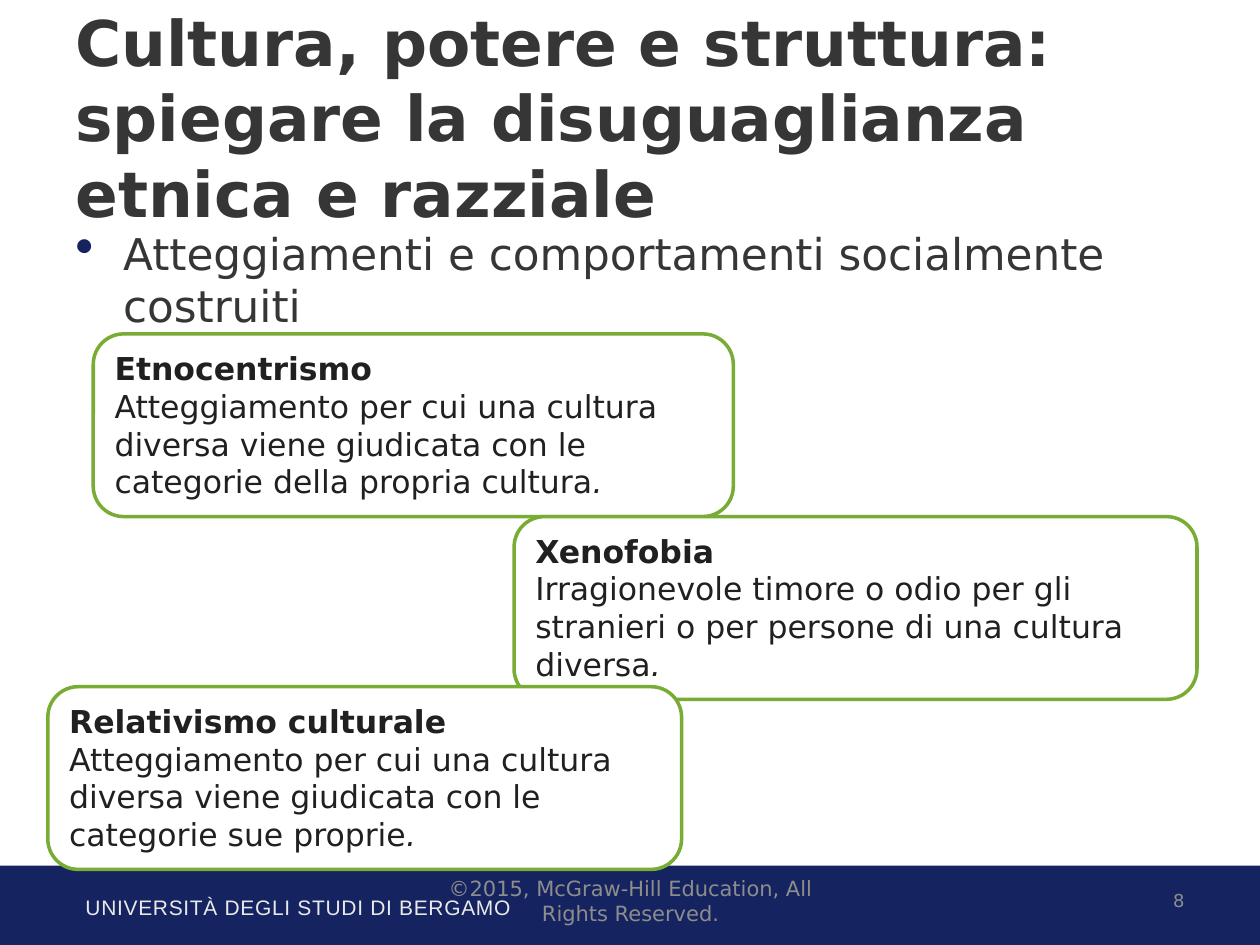
from pptx import Presentation
from pptx.dml.color import RGBColor
from pptx.enum.shapes import MSO_SHAPE
from pptx.enum.text import MSO_ANCHOR, PP_ALIGN
from pptx.util import Inches, Pt
from lxml.etree import SubElement
from pptx.oxml.ns import qn

TITLE = "Cultura, potere e struttura: spiegare la disuguaglianza etnica e razziale"
BULLET = "Atteggiamenti e comportamenti socialmente costruiti"
UNIVERSITY = "UNIVERSITÀ DEGLI STUDI DI BERGAMO"
COPYRIGHT = "©2015, McGraw-Hill Education, All Rights Reserved."
PAGE = "8"
CARDS = [
    (0.74, 2.65, 5.08, "Etnocentrismo",
     "Atteggiamento per cui una cultura diversa viene giudicata con le categorie della propria cultura"),
    (4.08, 4.1, 5.42, "Xenofobia",
     "Irragionevole timore o odio per gli stranieri o per persone di una cultura diversa"),
    (0.38, 5.45, 5.03, "Relativismo culturale",
     "Atteggiamento per cui una cultura diversa viene giudicata con le categorie sue proprie"),
]
CARD_HEIGHT = 1.45
THEME = {
    "font": "DejaVu Sans", "footer_font": "Arial",
    "navy": "152460", "green": "78AC35", "white": "FFFFFF",
    "heading": "363636", "card": "202020", "muted": "8D8D8D", "footer": "E9E9E9",
    "title_size": 36, "bullet_size": 25, "card_size": 18, "footer_size": 12, "page_size": 10.2,
}


def color(name):
    return RGBColor.from_string(THEME[name])


def add_run(p, text, size, ink, font="font", bold=False, italic=False):
    r = p.add_run()
    r.text = text
    r.font.name = THEME[font]
    r.font.size = Pt(THEME[size])
    r.font.color.rgb = color(ink)
    r.font.bold = bold
    r.font.italic = italic
    return r


def add_box(s, box, anchor=MSO_ANCHOR.TOP, align=PP_ALIGN.LEFT):
    tf = s.shapes.add_textbox(*map(Inches, box)).text_frame
    tf.word_wrap = True
    tf.vertical_anchor = anchor
    p = tf.paragraphs[0]
    p.alignment = align
    return p


def add_shape(s, kind, box, fill, line=None):
    sp = s.shapes.add_shape(kind, *map(Inches, box))
    sp.shadow.inherit = False
    sp.fill.solid()
    sp.fill.fore_color.rgb = color(fill)
    if line:
        sp.line.color.rgb = color(line)
        sp.line.width = Pt(2)
    else:
        sp.line.fill.background()
    return sp


def add_bullet(p):
    pPr = p._p.get_or_add_pPr()
    pPr.set("marL", str(Inches(0.38)))
    pPr.set("indent", str(-Inches(0.38)))
    SubElement(SubElement(pPr, qn("a:buClr")), qn("a:srgbClr")).set("val", THEME["navy"])
    SubElement(pPr, qn("a:buSzPct")).set("val", "122000")
    SubElement(pPr, qn("a:buChar")).set("char", "•")


def add_card(s, left, top, width, term, definition):
    sp = add_shape(s, MSO_SHAPE.ROUNDED_RECTANGLE, (left, top, width, CARD_HEIGHT), "white", "green")
    tf = sp.text_frame
    tf.word_wrap = True
    tf.vertical_anchor = MSO_ANCHOR.TOP
    head, body = tf.paragraphs[0], tf.add_paragraph()
    head.alignment = body.alignment = PP_ALIGN.LEFT
    add_run(head, term, "card_size", "card", bold=True)
    add_run(body, definition, "card_size", "card")
    add_run(body, ".", "card_size", "card", italic=True)


def main():
    prs = Presentation()
    prs.slide_width, prs.slide_height = Inches(10), Inches(7.5)
    s = prs.slides.add_slide(prs.slide_layouts[6])

    add_shape(s, MSO_SHAPE.RECTANGLE, (0, 6.87, 10, 0.68), "navy")
    p = add_box(s, (0.58, 7.05, 5.82, 0.3))
    r = add_run(p, UNIVERSITY, "footer_size", "footer", "footer_font")
    r.font._element.set("spc", "40")

    p = add_box(s, (0.5, 0.3, 9, 1.25), MSO_ANCHOR.MIDDLE)
    add_run(p, TITLE, "title_size", "heading", bold=True)
    p = add_box(s, (0.5, 1.75, 9, 4.95))
    add_bullet(p)
    add_run(p, BULLET, "bullet_size", "heading")

    p = add_box(s, (7.17, 6.95, 2.33, 0.4), MSO_ANCHOR.MIDDLE, PP_ALIGN.RIGHT)
    add_run(p, PAGE, "page_size", "muted")
    for card in CARDS:
        add_card(s, *card)
    p = add_box(s, (3.42, 6.95, 3.17, 0.4), MSO_ANCHOR.MIDDLE, PP_ALIGN.CENTER)
    add_run(p, COPYRIGHT, "footer_size", "muted")

    prs.save("out.pptx")


if __name__ == "__main__":
    main()
